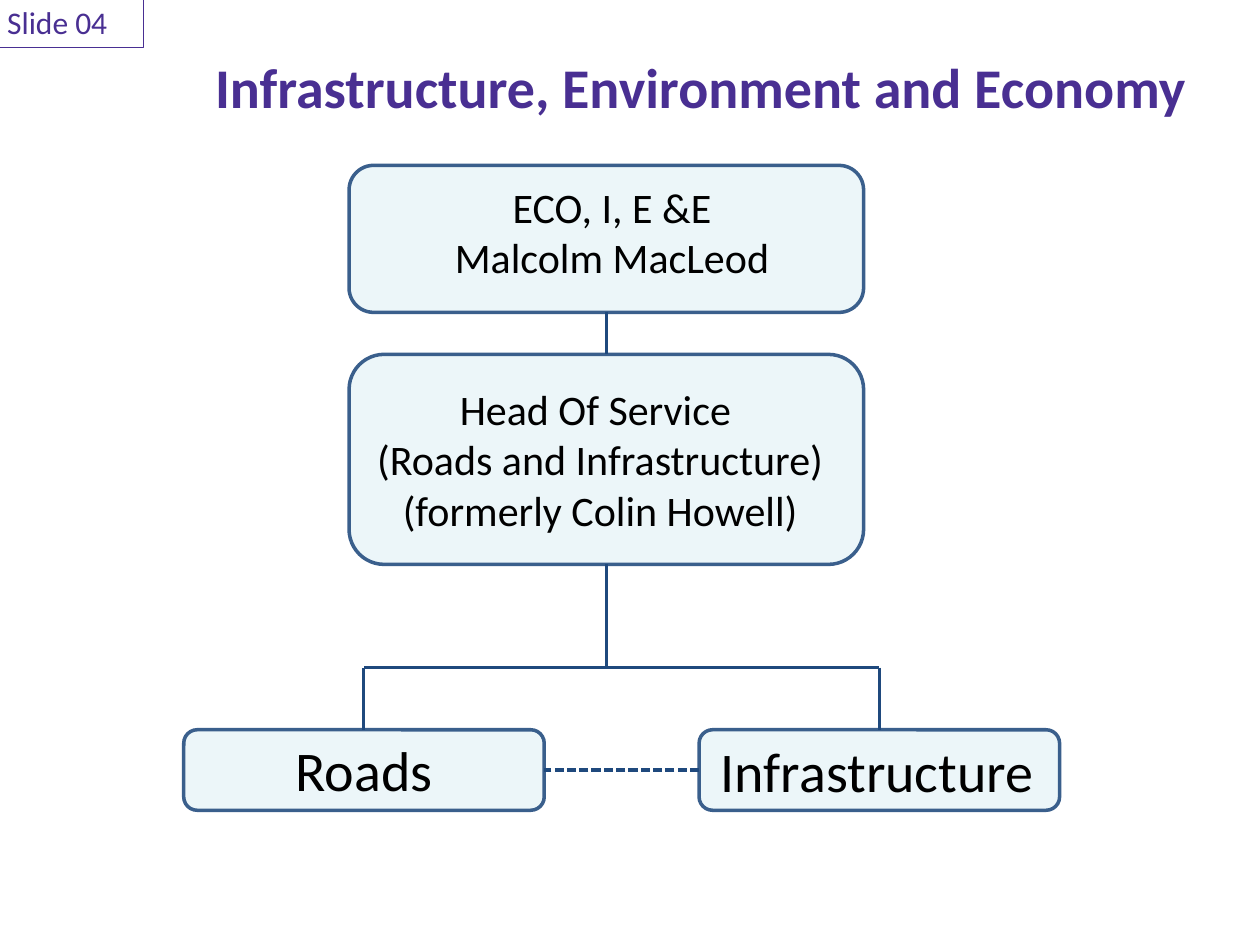
import pptx
import pptx.util
import pptx.dml.color
import pptx.enum.dml
import pptx.enum.shapes
import pptx.enum.text
import pptx.oxml
import pptx.oxml.ns

Pt = pptx.util.Pt
RGBColor = pptx.dml.color.RGBColor
SHAPE = pptx.enum.shapes.MSO_SHAPE
ALIGN = pptx.enum.text.PP_ALIGN
ANCHOR = pptx.enum.text.MSO_ANCHOR

PURPLE = RGBColor(0x49, 0x2F, 0x92)
PALE_BLUE = RGBColor(0xDB, 0xEE, 0xF4)
BORDER_BLUE = RGBColor(0x3A, 0x5F, 0x8C)
LINK_BLUE = RGBColor(0x1F, 0x49, 0x7D)
BLACK = RGBColor(0, 0, 0)
WHITE = RGBColor(255, 255, 255)


def write(frame, text, size, color, align=ALIGN.CENTER, bold=False):
    frame.word_wrap = True
    frame.text = text
    for paragraph in frame.paragraphs:
        paragraph.alignment = align
        for run in paragraph.runs:
            run.font.name = "Calibri"
            run.font.size = Pt(size)
            run.font.bold = bold
            run.font.color.rgb = color


def link(x1, y1, x2, y2):
    line = slide.shapes.add_connector(
        pptx.enum.shapes.MSO_CONNECTOR.STRAIGHT, Pt(x1), Pt(y1), Pt(x2), Pt(y2))
    line.line.color.rgb = LINK_BLUE
    line.line.width = Pt(1.75)
    line._element.spPr.append(pptx.oxml.parse_xml(
        f'<a:effectLst {pptx.oxml.ns.nsdecls("a")}/>'))
    return line


deck = pptx.Presentation()
deck.slide_width, deck.slide_height = Pt(720), Pt(540)
slide = deck.slides.add_slide(deck.slide_layouts[6])

# Slide number tag in the corner
tag = slide.shapes.add_shape(SHAPE.RECTANGLE, Pt(-3), Pt(-2), Pt(85), Pt(29))
tag.shadow.inherit = False
tag.fill.solid()
tag.fill.fore_color.rgb = WHITE
tag.line.color.rgb = PURPLE
tag.line.width = Pt(0.75)
tag.text_frame.vertical_anchor = ANCHOR.TOP
write(tag.text_frame, "Slide 04", 18, PURPLE, ALIGN.LEFT)

# Posts: box bounds, label bounds, font size, label
posts = [
    ((199.5, 94.5, 294, 84), (247.5, 100, 204.5, 65.5), 24,
     "ECO, I, E &E\nMalcolm MacLeod"),
    ((199.5, 202.5, 294, 120), (196, 215.5, 294, 94.5), 24,
     "Head Of Service \n(Roads and Infrastructure)\n(formerly Colin Howell)"),
    ((399.5, 417, 206, 46), (399, 417.5, 204.5, 46), 32, "Infrastructure"),
    ((105, 417, 206, 46), (105, 417, 206, 46), 32, "Roads"),
]
boxes = []
for bounds, label_bounds, size, text in posts:
    box = slide.shapes.add_shape(SHAPE.ROUNDED_RECTANGLE, *map(Pt, bounds))
    box.shadow.inherit = False
    box.fill.solid()
    box.fill.fore_color.rgb = PALE_BLUE
    tint = box._element.spPr.find(".//" + pptx.oxml.ns.qn("a:srgbClr"))
    tint.append(pptx.oxml.parse_xml(
        f'<a:alpha {pptx.oxml.ns.nsdecls("a")} val="50000"/>'))
    box.line.color.rgb = BORDER_BLUE
    box.line.width = Pt(2)
    boxes.append(box)
    label = slide.shapes.add_textbox(*map(Pt, label_bounds))
    write(label.text_frame, text, size, BLACK)
director, head, infrastructure, roads = boxes

# Reporting lines
trunk_x, bus_y, roads_x, infrastructure_x = 346.5, 381.5, 208, 502.5
reporting = link(trunk_x, 178.5, trunk_x, 202.5)
reporting.begin_connect(director, 2)
reporting.end_connect(head, 0)
trunk = link(trunk_x, 322.5, trunk_x, bus_y)
trunk.begin_connect(head, 2)
link(infrastructure_x, bus_y, roads_x, bus_y)
for x, team in ((roads_x, roads), (infrastructure_x, infrastructure)):
    link(x, bus_y, x, 417).end_connect(team, 0)

# Dashed link between the two teams
liaison = link(399.5, 440, 311, 440)
liaison.line.dash_style = pptx.enum.dml.MSO_LINE.SQUARE_DOT
liaison.begin_connect(infrastructure, 1)
liaison.end_connect(roads, 3)

# Title
title = slide.shapes.add_textbox(Pt(76.5), Pt(21.5), Pt(648), Pt(55.5))
title.text_frame.vertical_anchor = ANCHOR.MIDDLE
write(title.text_frame, "Infrastructure, Environment and Economy", 32, PURPLE, bold=True)

deck.save("out.pptx")
